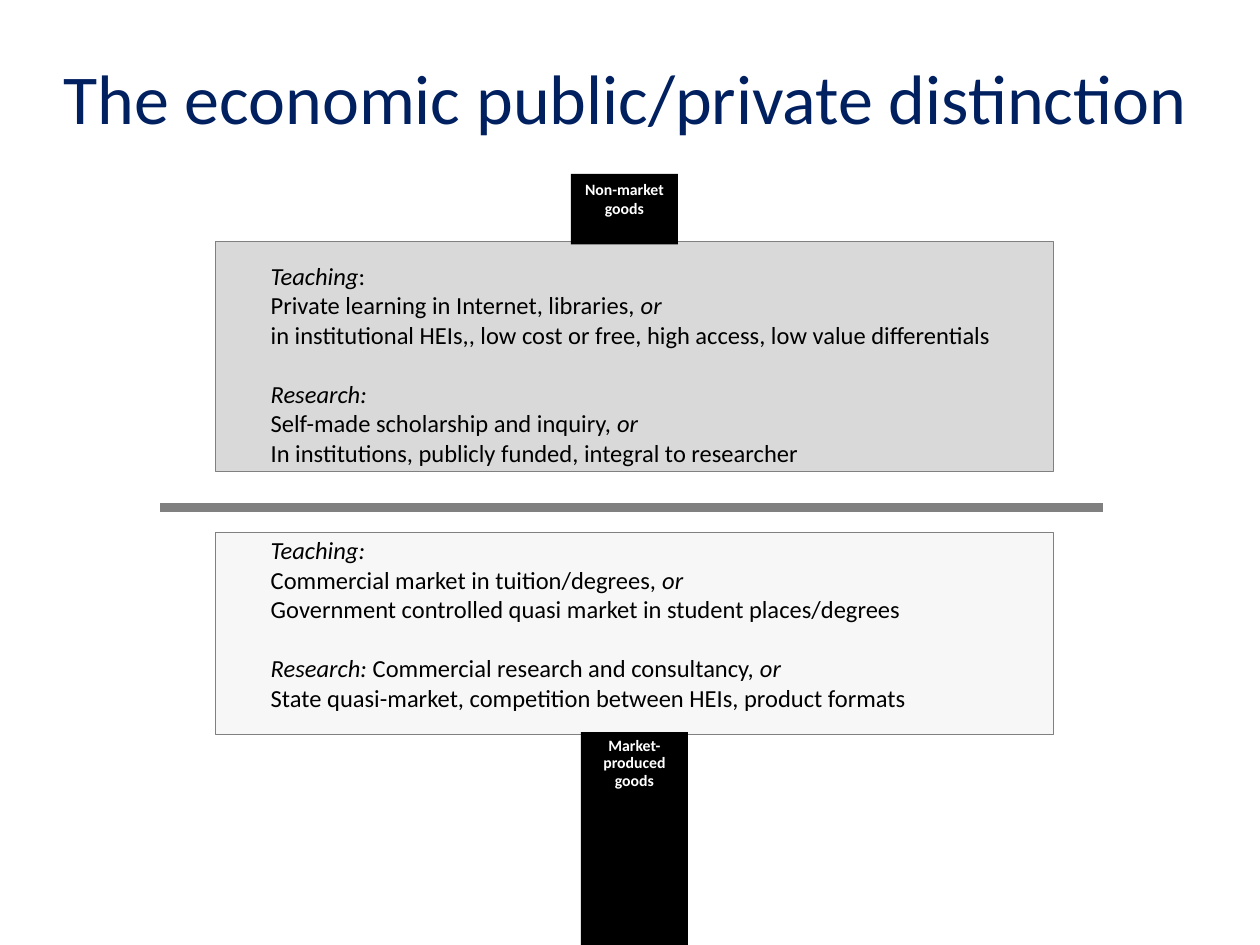
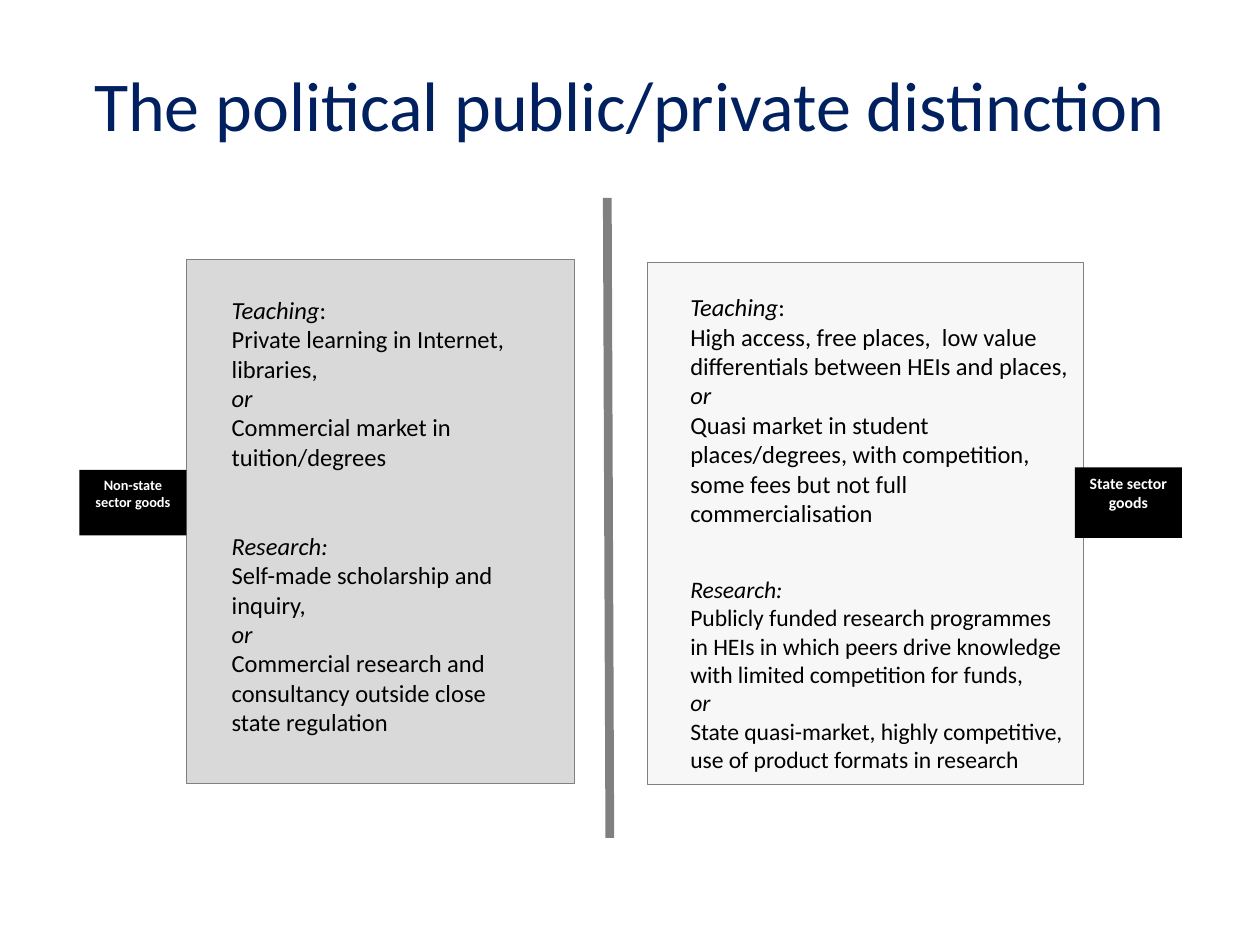
"""Two slides on the economic and the political public/private distinction."""
from lxml import etree
from pptx import Presentation
from pptx.dml.color import RGBColor
from pptx.enum.shapes import MSO_CONNECTOR, MSO_SHAPE
from pptx.enum.text import MSO_ANCHOR, MSO_AUTO_SIZE, PP_ALIGN
from pptx.oxml.ns import qn
from pptx.util import Inches, Pt

RECT, LINE = MSO_SHAPE.RECTANGLE, MSO_CONNECTOR.STRAIGHT
TOP, MIDDLE = MSO_ANCHOR.TOP, MSO_ANCHOR.MIDDLE
LEFT, CENTER = PP_ALIGN.LEFT, PP_ALIGN.CENTER
FIXED = MSO_AUTO_SIZE.NONE

NAVY, BLACK, WHITE = "002060", "000000", "FFFFFF"
GREY, PANEL = "808080", "D9D9D9"
FONT = "Calibri"
CLEAR = "20000"

deck = Presentation()
deck.slide_width, deck.slide_height = Inches(10), Inches(7.5)
UNIT = deck.slide_width / 100


def grid(*cells):
    """Turn columns and rows of a 100 by 75 grid into lengths."""
    return [round(cell * UNIT) for cell in cells]


def write(shape, paras, size, color, align=LEFT, anchor=TOP, lead=1.0, bold=False):
    """Fill a shape with (text, space before, size) rows; stars switch italics."""
    frame = shape.text_frame
    look = {"word_wrap": True, "auto_size": FIXED, "vertical_anchor": anchor}
    for key, value in look.items():
        setattr(frame, key, value)
    for place, (text, gap, own) in enumerate(paras):
        para = frame.add_paragraph() if place else frame.paragraphs[0]
        look = {"alignment": align, "line_spacing": lead, "space_before": Pt(gap)}
        for key, value in look.items():
            setattr(para, key, value)
        for turn, part in enumerate(text.split("*")):
            if part:
                run = para.add_run()
                run.text = part
                look = {"name": FONT, "size": Pt(own or size), "bold": bold,
                        "italic": turn % 2 == 1}
                for key, value in look.items():
                    setattr(run.font, key, value)
                run.font.color.rgb = RGBColor.from_string(color)


slides = [
    {
        "title": "The economic public/private distinction",
        "head": (2.9, 0, 93.4, 16.1),
        "rule": (12.7, 40.3, 87.5, 40.3),
        "panels": [(17.1, 19.2, 66.5, 18.2), (17.1, 42.3, 66.5, 16)],
        "tags": [
            ("Non-market goods", (45.3, 13.8, 8.5, 5.6), 9, 1.0),
            ("Market-produced goods", (46.1, 58.1, 8.5, 16.9), 9, 0.9),
        ],
        "texts": [
            ((20.5, 20.2, 59.4, 17.5), [
                ("*Teaching*:", 0, 14),
                ("Private learning in Internet, libraries, *or*", 0, 14),
                ("in institutional HEIs,, low cost or free, high access, "
                 "low value differentials", 0, 14),
                ("*Research:*", 17, 14),
                ("Self-made scholarship and inquiry, *or*", 0, 14),
                ("In institutions, publicly funded, integral to researcher", 0, 14),
            ]),
            ((20.5, 42, 63.1, 15.1), [
                ("*Teaching:*", 0, 14),
                ("Commercial market in tuition/degrees, *or*", 0, 14),
                ("Government controlled quasi market in student "
                 "places/degrees", 0, 14),
                ("*Research:* Commercial research and consultancy, *or*", 17, 14),
                ("State quasi-market, competition between HEIs, "
                 "product formats", 0, 14),
            ]),
        ],
    },
    {
        "title": "The political public/private distinction",
        "head": (2.9, 0, 94.1, 17.2),
        "rule": (48.2, 15.7, 48.4, 66.5),
        "panels": [(14.8, 20.6, 30.8, 41.6), (51.4, 20.8, 34.6, 41.5)],
        "tags": [
            ("State sector goods", (85.3, 37.1, 8.5, 5.6), 9, 1.0),
            ("Non-state sector goods", (6.3, 37.3, 8.5, 5.2), 8.2, 1.0),
        ],
        "texts": [
            ((53.8, 22.7, 32.2, 39.5), [
                ("*Teaching*:", 0, 14),
                ("High access, free places,  low value differentials between "
                 "HEIs and places, *or*", 0, 14),
                ("Quasi market in student places/degrees, with competition, "
                 "some fees but not full commercialisation", 0, 14),
                ("*Research:*", 27, 13.5),
                ("Publicly funded research programmes in HEIs in which peers "
                 "drive knowledge with limited competition for funds,", 0, 13.5),
                ("*or*", 0, 13.5),
                ("State quasi-market, highly competitive, use of product "
                 "formats in research", 0, 13.5),
            ]),
            ((17.4, 22.9, 26.2, 36.4), [
                ("*Teaching*:", 0, 14),
                ("Private learning in Internet, libraries,", 0, 14),
                ("*or*", 0, 14),
                ("Commercial market in tuition/degrees", 0, 14),
                ("*Research:*", 34, 14),
                ("Self-made scholarship and inquiry,", 0, 14),
                ("*or*", 0, 14),
                ("Commercial research and consultancy outside close state "
                 "regulation", 0, 14),
            ]),
        ],
    },
]

for plan in slides:
    slide = deck.slides.add_slide(deck.slide_layouts[5])
    shapes = slide.shapes

    title = shapes.title
    for key, value in zip(("left", "top", "width", "height"), grid(*plan["head"])):
        setattr(title, key, value)
    write(title, [(plan["title"], 0, 40)], 40, NAVY, CENTER, MIDDLE, 0.9)

    rule = shapes.add_connector(LINE, *grid(*plan["rule"]))
    rule.line.width = Pt(5)
    rule.line.color.rgb = RGBColor.from_string(GREY)
    etree.SubElement(rule._element.spPr, qn("a:effectLst"))

    for place, area in enumerate(plan["panels"]):
        panel = shapes.add_shape(RECT, *grid(*area))
        panel.shadow.inherit = False
        panel.fill.solid()
        panel.fill.fore_color.rgb = RGBColor.from_string(PANEL)
        panel.line.width = Pt(0.5)
        panel.line.color.rgb = RGBColor.from_string(GREY)
        if place:
            tint = panel._element.spPr.find(qn("a:solidFill")).find(qn("a:srgbClr"))
            etree.SubElement(tint, qn("a:alpha"), val=CLEAR)

    for text, area, size, lead in plan["tags"]:
        tag = shapes.add_shape(RECT, *grid(*area))
        tag.shadow.inherit = False
        tag.fill.solid()
        tag.fill.fore_color.rgb = RGBColor.from_string(BLACK)
        tag.line.fill.background()
        write(tag, [(text, 0, size)], size, WHITE, CENTER, TOP, lead, True)

    for area, paras in plan["texts"]:
        write(shapes.add_textbox(*grid(*area)), paras, 14, BLACK)

deck.save("out.pptx")
